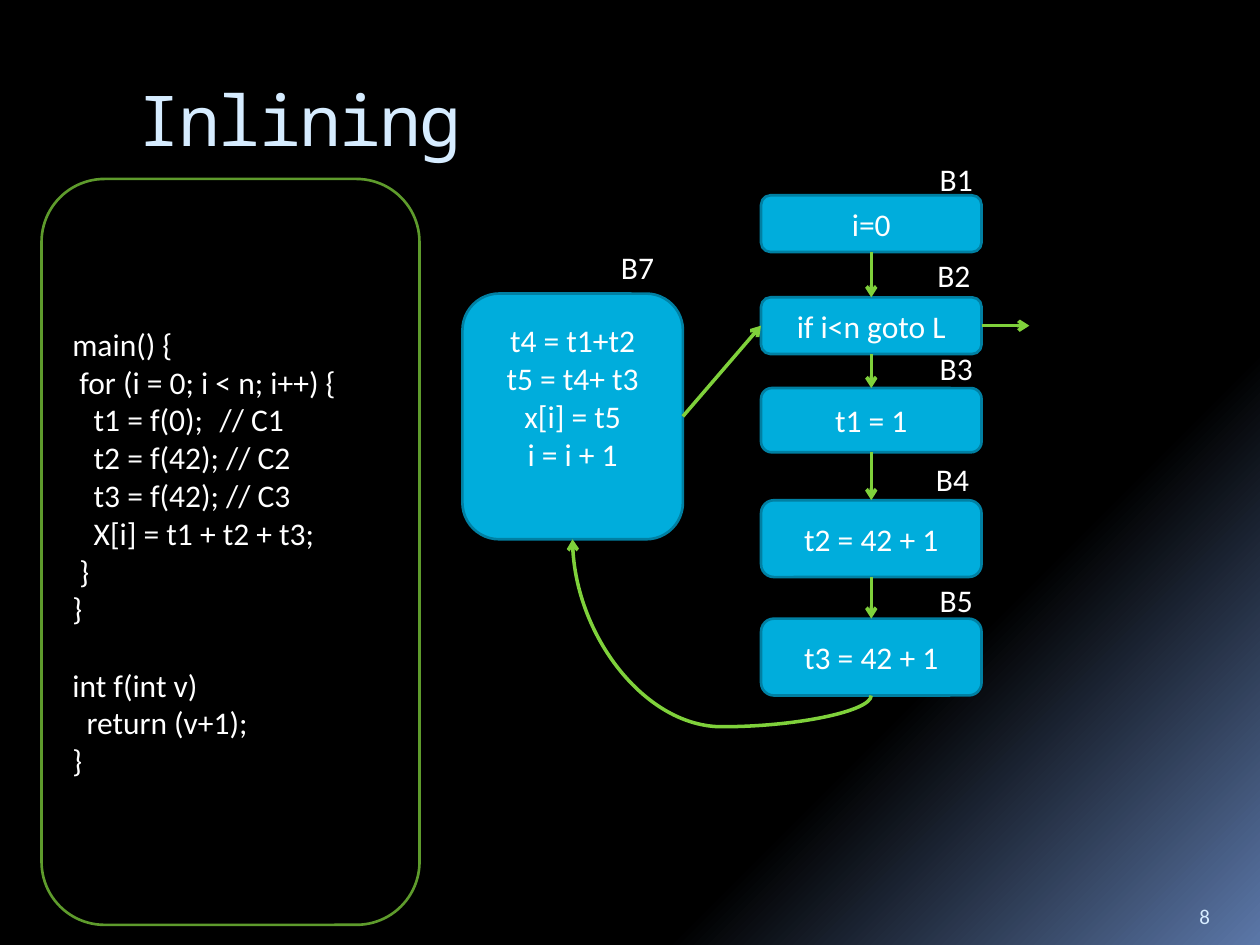
from lxml.etree import SubElement
from pptx import Presentation
from pptx.dml.color import RGBColor
from pptx.enum.shapes import MSO_CONNECTOR, MSO_SHAPE
from pptx.enum.text import MSO_ANCHOR, PP_ALIGN
from pptx.oxml.ns import qn
from pptx.util import Inches, Pt

COLORS = {"black": "000000", "glow": "5B77A8", "pale": "D6ECFF", "white": "FFFFFF",
          "code line": "5E9B2C", "block": "00ADDC", "block line": "0080A3", "arrow": "7FD13B"}
BODY = {"name": "Calibri", "size": Pt(18), "color": "white"}
TITLE = {"name": "Noto Sans Mono", "size": Pt(40), "color": "pale"}
NUMBER = {"name": "Calibri", "size": Pt(12), "color": "pale"}
LINE_HEIGHT = Pt(22)
SPACE_WIDTH = Pt(4.07)

# (indent in characters, text)
CODE = [(0, "main() {"), (1, "for (i = 0; i < n; i++) {"), (3, "t1 = f(0);\t// C1"),
        (3, "t2 = f(42); // C2"), (3, "t3 = f(42); // C3"), (3, "X[i] = t1 + t2 + t3;"),
        (1, "}"), (0, "}"), (0, "int f(int v)"), (2, "return (v+1);"), (0, "}")]
FUNCTION_START = 8
COMMENT_TAB = 1.27

# (text, top, height, label, label left, label top)
COLUMN = [("i=0", 1.55, 0.45, "B1", 7.36, 1.22),
          ("if i<n goto L", 2.36, 0.45, "B2", 7.34, 1.98),
          ("t1 = 1", 3.08, 0.51, "B3", 7.36, 2.72),
          ("t2 = 42 + 1", 3.97, 0.61, "B4", 7.33, 3.6),
          ("t3 = 42 + 1", 4.91, 0.61, "B5", 7.36, 4.56)]
COLUMN_LEFT, BLOCK_WIDTH = 6.04, 1.75
LOOP_BODY = ["t4 = t1+t2", "t5 = t4+ t3", "x[i] = t5", "i = i + 1"]
LOOP_LEFT, LOOP_TOP, LOOP_HEIGHT = 3.67, 2.33, 1.95
EXIT_LENGTH = 0.38
CURVE_BEND = -20000


def color(name):
    return RGBColor.from_string(COLORS[name])


def write(shape, lines, style, align=PP_ALIGN.LEFT, **frame_format):
    frame = shape.text_frame
    for key, value in {"word_wrap": True, **frame_format}.items():
        setattr(frame, key, value)
    for index, line in enumerate(lines):
        para = frame.paragraphs[0] if index == 0 else frame.add_paragraph()
        para.alignment = align
        para.text = line
        for span in para.runs:
            span.font.name, span.font.size = style["name"], style["size"]
            span.font.color.rgb = color(style["color"])
    return frame


def add_text(page, area, text, style, **frame_format):
    box = page.shapes.add_textbox(*map(Inches, area))
    return write(box, [text], style, **frame_format)


def add_box(page, area, line, fill=None):
    box = page.shapes.add_shape(MSO_SHAPE.ROUNDED_RECTANGLE, *map(Inches, area))
    box.shadow.inherit = False
    box.line.color.rgb, box.line.width = color(line), Pt(1.5)
    if fill:
        box.fill.solid()
        box.fill.fore_color.rgb = color(fill)
    else:
        box.fill.background()
    return box


def add_block(page, area, lines, **frame_format):
    box = add_box(page, area, "block line", "block")
    write(box, lines, BODY, PP_ALIGN.CENTER, vertical_anchor=MSO_ANCHOR.MIDDLE, **frame_format)


def add_arrow(page, start, end, kind=MSO_CONNECTOR.STRAIGHT):
    arrow = page.shapes.add_connector(kind, *map(Inches, (*start, *end)))
    arrow.line.color.rgb, arrow.line.width = color("arrow"), Pt(2)
    properties = arrow._element.spPr
    SubElement(properties.find(qn("a:ln")), qn("a:tailEnd"), type="arrow")
    SubElement(properties, qn("a:effectLst"))
    return arrow


def add_return_curve(page, start, end):
    """Curve that leaves start downwards and enters end from below."""
    middle_x, middle_y = (start[0] + end[0]) / 2, (start[1] + end[1]) / 2
    half_width, half_height = (start[1] - end[1]) / 2, (start[0] - end[0]) / 2
    curve = add_arrow(page, (middle_x + half_width, middle_y - half_height),
                      (middle_x - half_width, middle_y + half_height), MSO_CONNECTOR.CURVE)
    properties = curve._element.spPr
    properties.find(qn("a:xfrm")).set("rot", str(90 * 60000))
    guides = properties.find(qn("a:prstGeom")).find(qn("a:avLst"))
    SubElement(guides, qn("a:gd"), name="adj1", fmla=f"val {CURVE_BEND}")


def add_code(page):
    box = add_box(page, (0.33, 1.42, 3, 5.92), "code line")
    frame = write(box, [text for _, text in CODE], BODY, vertical_anchor=MSO_ANCHOR.MIDDLE)
    for para, (indent, text) in zip(frame.paragraphs, CODE):
        properties = para._p.get_or_add_pPr()
        properties.set("marL", str(int(indent * SPACE_WIDTH)))
        properties.set("indent", "0")
        if "\t" in text:
            tabs = SubElement(properties, qn("a:tabLst"))
            SubElement(tabs, qn("a:tab"), pos=str(Inches(COMMENT_TAB)), algn="l")
    frame.paragraphs[FUNCTION_START].space_before = LINE_HEIGHT


def add_flow(page):
    center, right = COLUMN_LEFT + BLOCK_WIDTH / 2, COLUMN_LEFT + BLOCK_WIDTH
    for text, top, height, label, label_left, label_top in COLUMN:
        add_block(page, (COLUMN_LEFT, top, BLOCK_WIDTH, height), [text])
        add_text(page, (label_left, label_top, 0.48, 0.4), label, BODY, word_wrap=False)
    for upper, lower in zip(COLUMN, COLUMN[1:]):
        add_arrow(page, (center, upper[1] + upper[2]), (center, lower[1]))

    add_block(page, (LOOP_LEFT, LOOP_TOP, BLOCK_WIDTH, LOOP_HEIGHT), LOOP_BODY,
              margin_bottom=Inches(0.05) + LINE_HEIGHT)
    add_text(page, (4.83, 1.92, 0.46, 0.4), "B7", BODY, word_wrap=False)

    test_middle = COLUMN[1][1] + COLUMN[1][2] / 2
    add_arrow(page, (right, test_middle), (right + EXIT_LENGTH, test_middle))
    add_arrow(page, (LOOP_LEFT + BLOCK_WIDTH, LOOP_TOP + LOOP_HEIGHT / 2),
              (COLUMN_LEFT, test_middle))
    add_return_curve(page, (center, COLUMN[-1][1] + COLUMN[-1][2]),
                     (LOOP_LEFT + BLOCK_WIDTH / 2, LOOP_TOP + LOOP_HEIGHT))


def main():
    deck = Presentation()
    deck.slide_width, deck.slide_height = Inches(10), Inches(7.5)
    page = deck.slides.add_slide(deck.slide_layouts[6])
    fill = page.background.fill
    fill.gradient()
    fill.gradient_angle = 315
    for stop, (position, name) in zip(fill.gradient_stops, [(0.73, "black"), (1, "glow")]):
        stop.position, stop.color.rgb = position, color(name)

    title = add_text(page, (1, 0.56, 8.5, 1), "Inlining", TITLE)
    title.paragraphs[0].runs[0].font._element.set("spc", "-100")
    add_text(page, (9.42, 7.02, 0.5, 0.4), "8", NUMBER, vertical_anchor=MSO_ANCHOR.BOTTOM)
    add_code(page)
    add_flow(page)
    deck.save("out.pptx")


if __name__ == "__main__":
    main()
